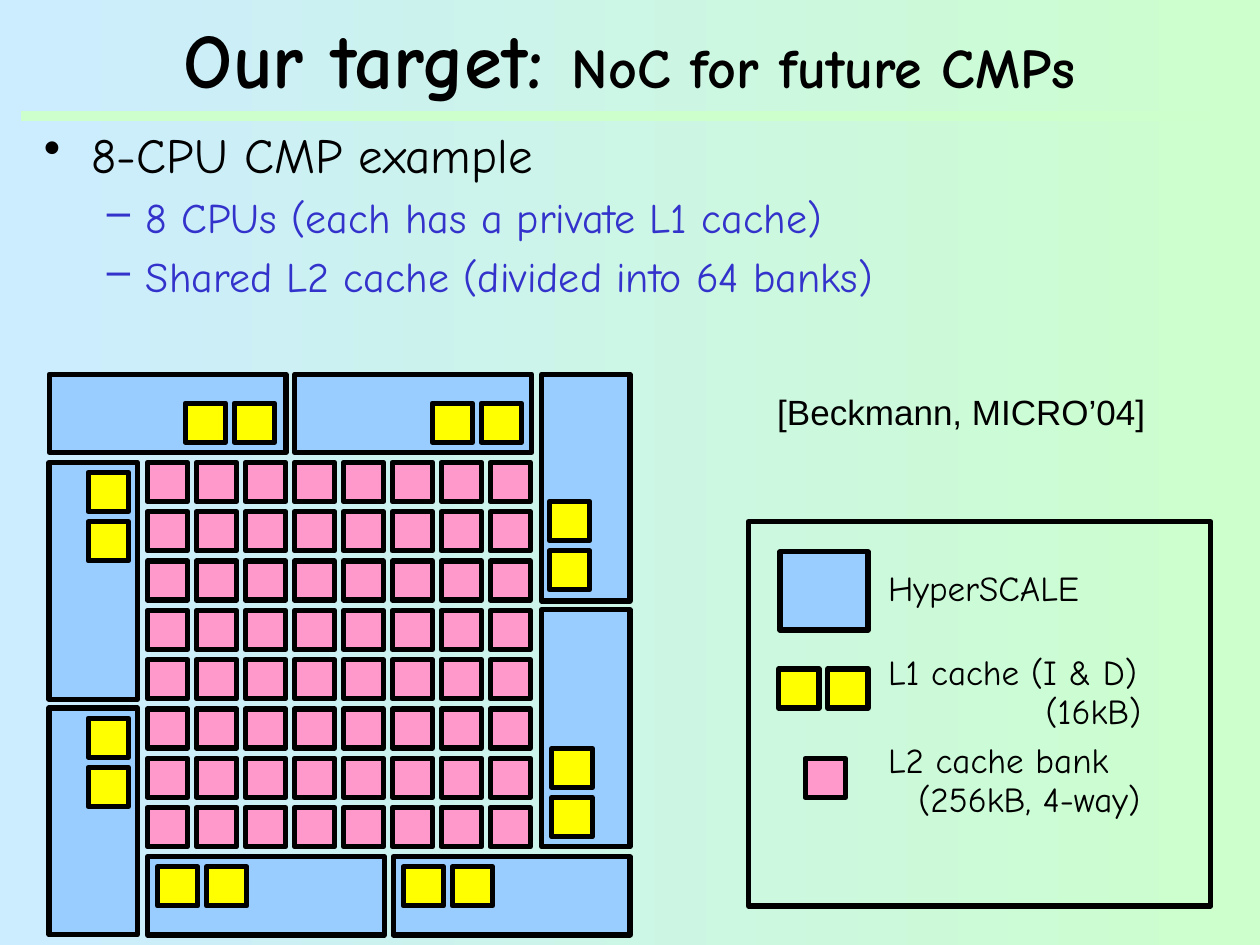
import pptx
import pptx.util
import pptx.dml.color
import pptx.enum.shapes
import pptx.enum.text
import pptx.oxml.ns
from lxml import etree

Inches = pptx.util.Inches
Pt = pptx.util.Pt
PP_ALIGN = pptx.enum.text.PP_ALIGN
MSO_ANCHOR = pptx.enum.text.MSO_ANCHOR

COLORS = {"black": "000000", "blue_text": "3333CC", "sky": "CCECFF", "mint": "CCFFCC",
          "core": "99CCFF", "l1": "FFFF00", "l2": "FF99CC"}
FONT = "Comic Neue"

TITLE = [("Our target: ", 44), ("NoC for future CMPs", 32)]
# text, size, colour, bullet, left margin, hanging indent
BULLETS = [
    ("8-CPU CMP example", 28, "black", "•", 0.38, 0.38),
    ("8 CPUs (each has a private L1 cache)", 24, "blue_text", "–", 0.81, 0.31),
    ("Shared L2 cache (divided into 64 banks)", 24, "blue_text", "–", 0.81, 0.31),
]
# core left, top, width, height; first L1 cache left, top; direction of the pair
CORES = [
    (2.34, 2.97, 1.88, 0.62, 3.43, 3.2, "across"),
    (0.39, 2.97, 1.88, 0.62, 1.47, 3.2, "across"),
    (3.12, 6.8, 1.88, 0.62, 3.2, 6.88, "across"),
    (1.17, 6.8, 1.88, 0.62, 1.25, 6.88, "across"),
    (0.39, 3.67, 0.7, 1.88, 0.7, 3.75, "down"),
    (0.39, 5.62, 0.7, 1.8, 0.7, 5.7, "down"),
    (4.3, 4.84, 0.7, 1.88, 4.38, 5.94, "down"),
    (4.3, 2.97, 0.7, 1.8, 4.36, 3.98, "down"),
]
# text, left, top, width, font
LABELS = [
    ("HyperSCALE", 6.95, 4.45, 1.82, FONT),
    ("L1 cache (I & D)", 6.95, 5.11, 2.4, FONT),
    ("(16kB)", 8.2, 5.42, 1.03, FONT),
    ("L2 cache bank", 6.95, 5.81, 2.14, FONT),
    ("(256kB, 4-way)", 7.19, 6.12, 2.18, FONT),
    ("[Beckmann, MICRO’04]", 6.07, 3.05, 3.22, "Arial"),
]
BANKS_PER_SIDE = 8
GRID_LEFT, GRID_TOP = 1.17, 3.67
STEP_X, STEP_Y = (3.89 - 1.17) / 7, (6.41 - 3.67) / 7
CELL_W, CELL_H = 0.32, 0.31

deck = pptx.Presentation()
deck.slide_width, deck.slide_height = Inches(10), Inches(7.5)
page = deck.slides.add_slide(deck.slide_layouts[6])


def rgb(name):
    return pptx.dml.color.RGBColor.from_string(COLORS[name])


def add_span(para, text, size=20, color="black", font=FONT, bold=False):
    span = para.add_run()
    span.text = text
    span.font.size = Pt(size)
    span.font.name = font
    span.font.bold = bold
    span.font.color.rgb = rgb(color)


def add_frame(left, top, width, height, wrap=True):
    box = page.shapes.add_textbox(Inches(left), Inches(top), Inches(width), Inches(height))
    box.text_frame.word_wrap = wrap
    return box.text_frame


def set_bullet(para, mark, margin, hanging):
    props = para._p.get_or_add_pPr()
    props.set("marL", str(Inches(margin)))
    props.set("indent", str(-Inches(hanging)))
    qn = pptx.oxml.ns.qn
    before = etree.SubElement(props, qn("a:spcBef"))
    etree.SubElement(before, qn("a:spcPct"), val="20000")
    etree.SubElement(props, qn("a:buChar"), char=mark)


def add_block(left, top, width, height, color=None):
    block = page.shapes.add_shape(pptx.enum.shapes.MSO_SHAPE.RECTANGLE, Inches(left),
                                  Inches(top), Inches(width), Inches(height))
    block.shadow.inherit = False
    if color:
        block.fill.solid()
        block.fill.fore_color.rgb = rgb(color)
    else:
        block.fill.background()
    block.line.color.rgb = rgb("black")
    block.line.width = Pt(3)


def add_cell(left, top, color):
    add_block(left, top, CELL_W, CELL_H, color)


def add_l1_pair(left, top, direction):
    add_cell(left, top, "l1")
    if direction == "across":
        add_cell(left + STEP_X, top, "l1")
    else:
        add_cell(left, top + STEP_Y, "l1")


# Background and rule under the title
back = page.background.fill
back.gradient()
back.gradient_angle = 0
for stop, name in zip(back.gradient_stops, ("sky", "mint")):
    stop.color.rgb = rgb(name)
rule = page.shapes.add_connector(pptx.enum.shapes.MSO_CONNECTOR.STRAIGHT,
                                 Inches(0.17), Inches(0.92), Inches(9.92), Inches(0.92))
rule.line.color.rgb = rgb("mint")
rule.line.width = Pt(6)
etree.SubElement(rule._element.spPr, pptx.oxml.ns.qn("a:effectLst"))

# Title
frame = add_frame(0.25, 0.08, 9.5, 0.75)
frame.vertical_anchor = MSO_ANCHOR.MIDDLE
frame.paragraphs[0].alignment = PP_ALIGN.CENTER
for text, size in TITLE:
    add_span(frame.paragraphs[0], text, size=size, bold=True)

# Bullets
frame = add_frame(0.25, 0.94, 9.59, 2.27)
for index, (text, size, color, mark, margin, hanging) in enumerate(BULLETS):
    para = frame.add_paragraph() if index else frame.paragraphs[0]
    set_bullet(para, mark, margin, hanging)
    add_span(para, text, size=size, color=color)

# Chip: L2 banks, then cores with their L1 caches
for row in range(BANKS_PER_SIDE):
    for column in range(BANKS_PER_SIDE):
        add_cell(GRID_LEFT + column * STEP_X, GRID_TOP + row * STEP_Y, "l2")
for left, top, width, height, cache_left, cache_top, direction in CORES:
    add_block(left, top, width, height, "core")
    add_l1_pair(cache_left, cache_top, direction)

# Legend
add_block(5.94, 4.14, 3.67, 3.05)
add_block(6.19, 4.38, 0.7, 0.62, "core")
add_l1_pair(6.18, 5.31, "across")
add_cell(6.39, 6.02, "l2")
for text, left, top, width, font in LABELS:
    frame = add_frame(left, top, width, 0.44, wrap=False)
    add_span(frame.paragraphs[0], text, font=font)

deck.save("out.pptx")
